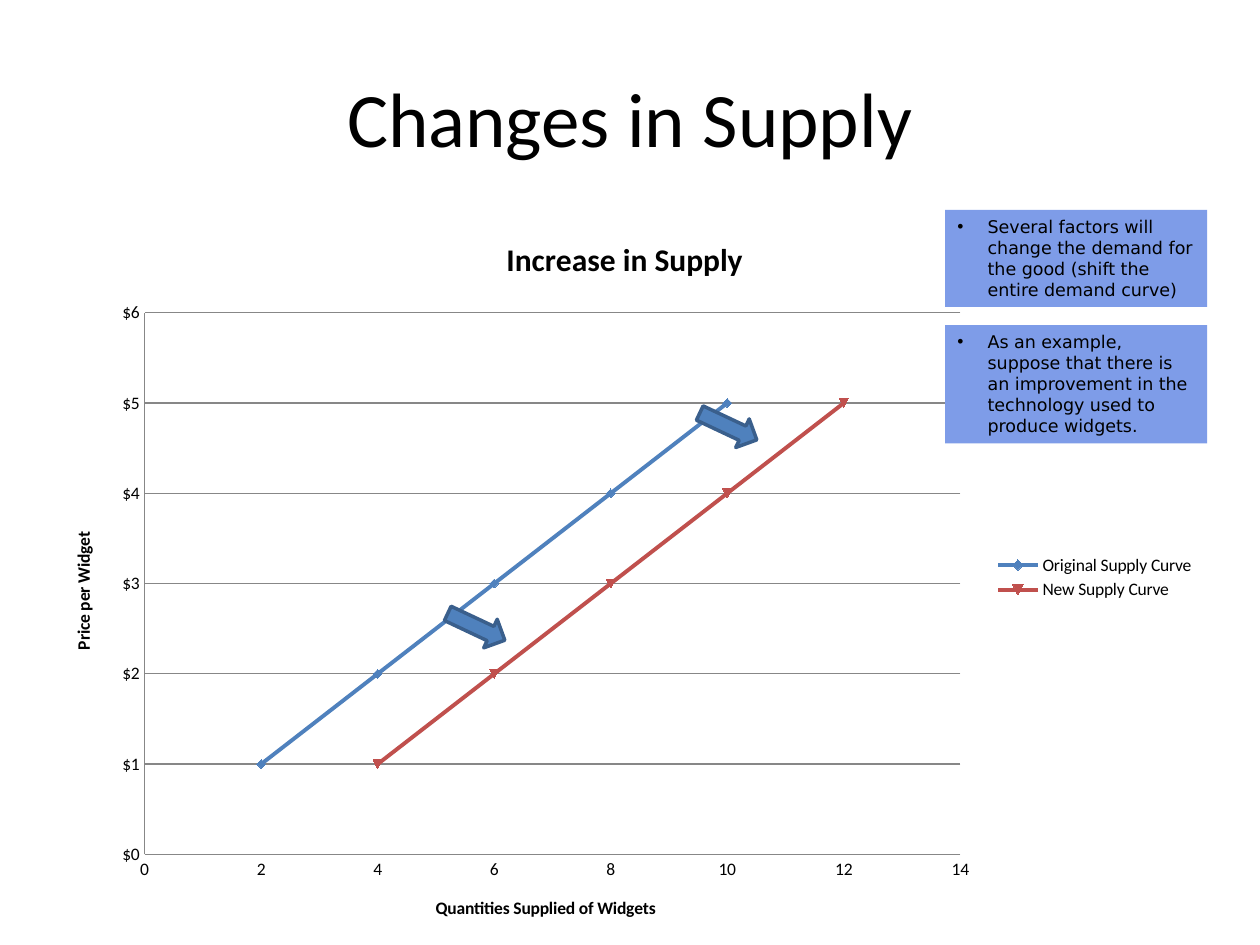
import pptx
import pptx.chart.data
import pptx.dml.color
import pptx.enum.chart
import pptx.enum.shapes
import pptx.enum.text
import pptx.oxml
import pptx.util
from dataclasses import dataclass
from lxml import etree


@dataclass(frozen=True)
class Theme:
    ink: str = "000000"
    paper: str = "FFFFFF"
    note: str = "7E9CE8"
    old: str = "4F81BD"
    new: str = "C0504D"
    edge: str = "3A5F8C"
    grid: str = "878787"
    font: str = "Calibri"
    note_font: str = "DejaVu Sans"
    title: int = 44
    chart_title: int = 18
    body: int = 10


THEME = Theme()
WIDTH, HEIGHT = 10, 7.5


def rgb(value):
    return pptx.dml.color.RGBColor.from_string(value)


def inches(box):
    return [pptx.util.Inches(v) for v in box]


def style(font, size, name=THEME.font, bold=False):
    font.size, font.name, font.bold = pptx.util.Pt(size), name, bold
    font.color.rgb = rgb(THEME.ink)


def paint(fill, color):
    fill.solid()
    fill.fore_color.rgb = rgb(color)


def add_title(s, box, text):
    sp = s.shapes.title
    sp.left, sp.top, sp.width, sp.height = inches(box)
    tf = sp.text_frame
    tf.text = text
    tf.vertical_anchor = pptx.enum.text.MSO_ANCHOR.MIDDLE
    p = tf.paragraphs[0]
    p.alignment = pptx.enum.text.PP_ALIGN.CENTER
    style(p.runs[0].font, THEME.title)


def title_chart_part(part, text, size):
    tf = part.text_frame
    tf.text = text
    style(tf.paragraphs[0].runs[0].font, size, bold=True)


def format_axis(axis, title, top, step, number_format):
    axis.minimum_scale, axis.maximum_scale, axis.major_unit = 0, top, step
    axis.major_tick_mark = pptx.enum.chart.XL_TICK_MARK.NONE
    axis.tick_labels.number_format = number_format
    axis.tick_labels.number_format_is_linked = False
    axis.format.line.color.rgb = rgb(THEME.grid)
    title_chart_part(axis.axis_title, title, THEME.body)


def place_plot(chart, **shares):
    plot_area = chart.plots[0]._element.getparent()
    for old in plot_area.findall(pptx.oxml.ns.qn("c:layout")):
        plot_area.remove(old)
    layout = etree.Element(pptx.oxml.ns.qn("c:layout"))
    manual = etree.SubElement(layout, pptx.oxml.ns.qn("c:manualLayout"))
    settings = dict(layoutTarget="inner", xMode="edge", yMode="edge", **shares)
    for tag, value in settings.items():
        etree.SubElement(manual, pptx.oxml.ns.qn("c:" + tag)).set("val", str(value))
    plot_area.insert(0, layout)


def add_supply_chart(s, box):
    prices = [5, 4, 3, 2, 1]
    curves = [("Original Supply Curve", 0, THEME.old), ("New Supply Curve", 2, THEME.new)]
    data = pptx.chart.data.XyChartData()
    for name, shift, _ in curves:
        series = data.add_series(name)
        for price in prices:
            series.add_data_point(2 * price + shift, price)
    kind = pptx.enum.chart.XL_CHART_TYPE.XY_SCATTER_SMOOTH
    chart = s.shapes.add_chart(kind, *inches(box), data).chart
    style(chart.font, THEME.body)
    chart.has_title = True
    title_chart_part(chart.chart_title, "Increase in Supply", THEME.chart_title)
    chart.has_legend = True
    chart.legend.position = pptx.enum.chart.XL_LEGEND_POSITION.RIGHT
    chart.legend.include_in_layout = False
    format_axis(chart.category_axis, "Quantities Supplied of Widgets", 14, 2, "General")
    format_axis(chart.value_axis, "Price per Widget", 6, 1, '"$"#,##0')
    chart.category_axis.has_major_gridlines = False
    chart.value_axis.has_major_gridlines = True
    chart.value_axis.major_gridlines.format.line.color.rgb = rgb(THEME.grid)
    plot = chart.plots[0]
    plot.vary_by_categories = False
    for series, (_, _, color) in zip(plot.series, curves):
        series.format.line.color.rgb = rgb(color)
        series.format.line.width = pptx.util.Pt(2.25)
        paint(series.marker.format.fill, color)
        series.marker.format.line.color.rgb = rgb(color)
    place_plot(chart, x=0.088, y=0.14, w=0.70, h=0.737)


def add_note(s, box, text):
    sp = s.shapes.add_shape(pptx.enum.shapes.MSO_SHAPE.RECTANGLE, *inches(box))
    sp.shadow.inherit = False
    paint(sp.fill, THEME.note)
    sp.line.fill.background()
    tf = sp.text_frame
    tf.word_wrap = True
    tf.vertical_anchor = pptx.enum.text.MSO_ANCHOR.TOP
    tf.text = text
    p = tf.paragraphs[0]
    p.alignment = pptx.enum.text.PP_ALIGN.LEFT
    style(p.runs[0].font, THEME.body, THEME.note_font)
    indent = pptx.util.Inches(0.24)
    props = p._p.get_or_add_pPr()
    props.set("marL", str(indent))
    props.set("indent", str(-indent))
    etree.SubElement(props, pptx.oxml.ns.qn("a:buFont")).set("typeface", "Arial")
    etree.SubElement(props, pptx.oxml.ns.qn("a:buChar")).set("char", "•")


def add_shift_arrow(s, box):
    sp = s.shapes.add_shape(pptx.enum.shapes.MSO_SHAPE.RIGHT_ARROW, *inches(box))
    sp.shadow.inherit = False
    sp.rotation = 25.2
    paint(sp.fill, THEME.old)
    sp.line.color.rgb = rgb(THEME.edge)
    sp.line.width = pptx.util.Pt(2)


def build_supply_slide(prs):
    s = prs.slides.add_slide(prs.slide_layouts[5])
    paint(s.background.fill, THEME.paper)
    margin, top = WIDTH / 20, HEIGHT * 2 / 9
    add_title(s, (margin, HEIGHT * 0.04, WIDTH - 2 * margin, HEIGHT / 6),
              "Changes in Supply")
    add_supply_chart(s, (WIDTH / 30, top, WIDTH * 0.925, HEIGHT - top))
    notes = [
        (top, 0.77, "Several factors will change the demand for the good "
                    "(shift the entire demand curve)"),
        (2.58, 0.94, "As an example, suppose that there is an improvement in the "
                     "technology used to produce widgets."),
    ]
    for y, height, text in notes:
        add_note(s, (WIDTH * 0.75, y, WIDTH * 0.208, height), text)
    for x, y in [(5.53, 3.26), (3.53, 4.85)]:
        add_shift_arrow(s, (x, y, WIDTH / 20, HEIGHT / 30))


def main():
    prs = pptx.Presentation()
    prs.slide_width, prs.slide_height = inches((WIDTH, HEIGHT))
    build_supply_slide(prs)
    prs.save("out.pptx")


if __name__ == "__main__":
    main()
